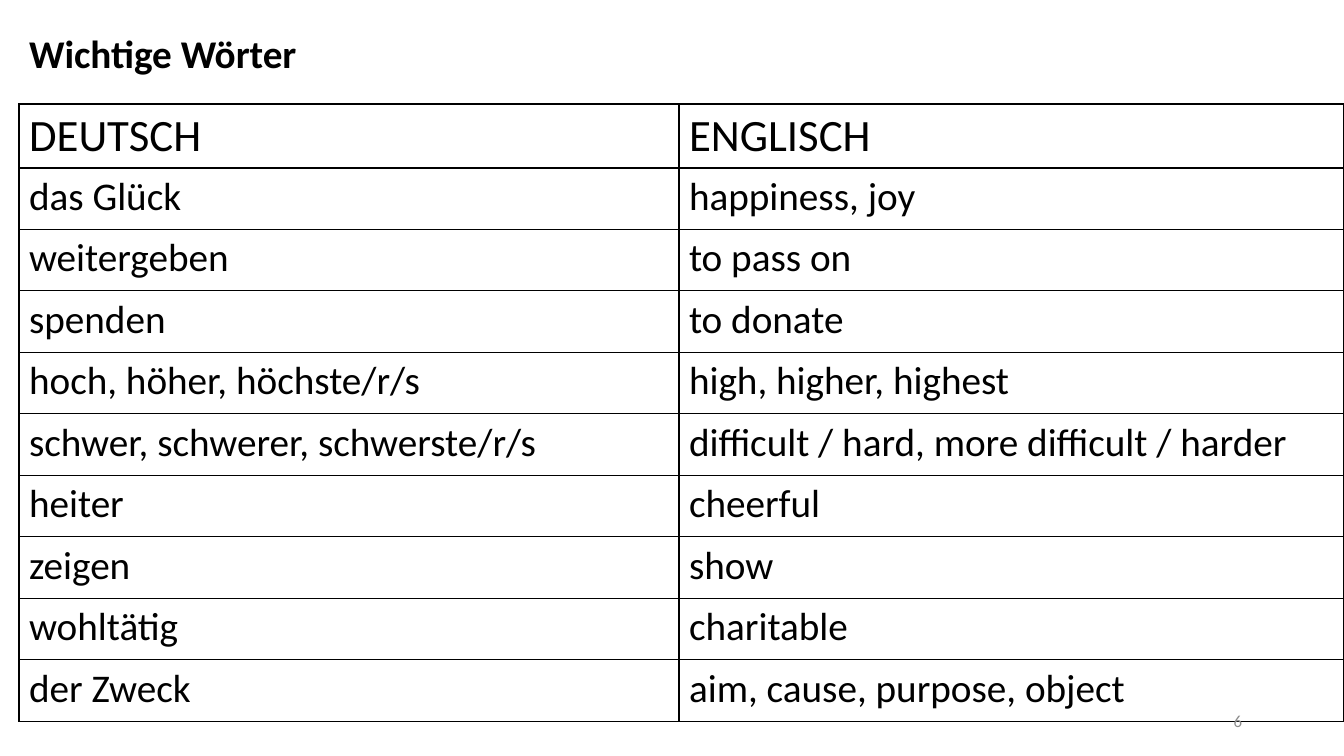
from dataclasses import dataclass

from lxml import etree
from pptx import Presentation
from pptx.dml.color import RGBColor
from pptx.enum.text import MSO_ANCHOR, MSO_AUTO_SIZE, PP_ALIGN
from pptx.oxml.ns import qn
from pptx.util import Emu, Pt

LEFT, RIGHT = PP_ALIGN.LEFT, PP_ALIGN.RIGHT
TOP, MIDDLE = MSO_ANCHOR.TOP, MSO_ANCHOR.MIDDLE
FIT_SHAPE = MSO_AUTO_SIZE.SHAPE_TO_FIT_TEXT

TITLE = "Wichtige Wörter"
PAGE_NUMBER = "6"
VOCABULARY = [
    ("DEUTSCH", "ENGLISCH"),
    ("das Glück", "happiness, joy"),
    ("weitergeben", "to pass on"),
    ("spenden", "to donate"),
    ("hoch, höher, höchste/r/s", "high, higher, highest"),
    ("schwer, schwerer, schwerste/r/s", "difficult / hard, more difficult / harder"),
    ("heiter", "cheerful"),
    ("zeigen", "show"),
    ("wohltätig", "charitable"),
    ("der Zweck", "aim, cause, purpose, object"),
]

# Left, top, width, height in px
SLIDE_SIZE = (1344, 756)
TITLE_BOX = (19, 24, 300, 57)
TABLE_BOX = (19, 104, 1325, 615)
PAGE_NUMBER_BOX = (950, 701, 302, 40)
COLUMN_WIDTHS = (660, 665)
PX_PER_INCH = 100.8


@dataclass(frozen=True)
class Theme:
    font: str = "Calibri"
    ink: str = "000000"
    muted: str = "8C8C8C"
    paper: str = "FFFFFF"
    header_size: int = 32
    body_size: int = 28
    page_number_size: int = 12
    border_width: int = 1


THEME = Theme()


def px(length):
    return Emu(round(length * 914400 / PX_PER_INCH))


def write(text_frame, text, size, color=THEME.ink, bold=False, align=LEFT):
    text_frame.text = text
    paragraph = text_frame.paragraphs[0]
    paragraph.alignment = align
    font = paragraph.runs[0].font
    font.name = THEME.font
    font.size = Pt(size)
    font.bold = bold
    font.color.rgb = RGBColor.from_string(color)


def draw_borders(cell):
    properties = cell._tc.get_or_add_tcPr()
    for side in ("a:lnL", "a:lnR", "a:lnT", "a:lnB"):
        line = etree.SubElement(properties, qn(side), w=str(Pt(THEME.border_width)))
        fill = etree.SubElement(line, qn("a:solidFill"))
        etree.SubElement(fill, qn("a:srgbClr"), val=THEME.ink)


def add_title(slide):
    title = slide.shapes.title
    title.left, title.top, title.width, title.height = map(px, TITLE_BOX)
    text_frame = title.text_frame
    text_frame.word_wrap = False
    text_frame.auto_size = FIT_SHAPE
    text_frame.vertical_anchor = TOP
    write(text_frame, TITLE, THEME.body_size, bold=True)


def add_vocabulary(slide):
    table = slide.shapes.add_table(
        len(VOCABULARY), len(COLUMN_WIDTHS), *map(px, TABLE_BOX)
    ).table
    table.first_row = False
    table.horz_banding = False
    for column, width in zip(table.columns, COLUMN_WIDTHS):
        column.width = px(width)
    for row_index, words in enumerate(VOCABULARY):
        size = THEME.body_size if row_index else THEME.header_size
        for column_index, word in enumerate(words):
            cell = table.cell(row_index, column_index)
            draw_borders(cell)
            cell.fill.solid()
            cell.fill.fore_color.rgb = RGBColor.from_string(THEME.paper)
            write(cell.text_frame, word, size)


def add_page_number(slide):
    text_frame = slide.shapes.add_textbox(*map(px, PAGE_NUMBER_BOX)).text_frame
    text_frame.word_wrap = True
    text_frame.vertical_anchor = MIDDLE
    write(text_frame, PAGE_NUMBER, THEME.page_number_size, THEME.muted, align=RIGHT)


def main():
    presentation = Presentation()
    presentation.slide_width, presentation.slide_height = map(px, SLIDE_SIZE)
    slide = presentation.slides.add_slide(presentation.slide_layouts[5])
    add_title(slide)
    add_vocabulary(slide)
    add_page_number(slide)
    presentation.save("out.pptx")


if __name__ == "__main__":
    main()
